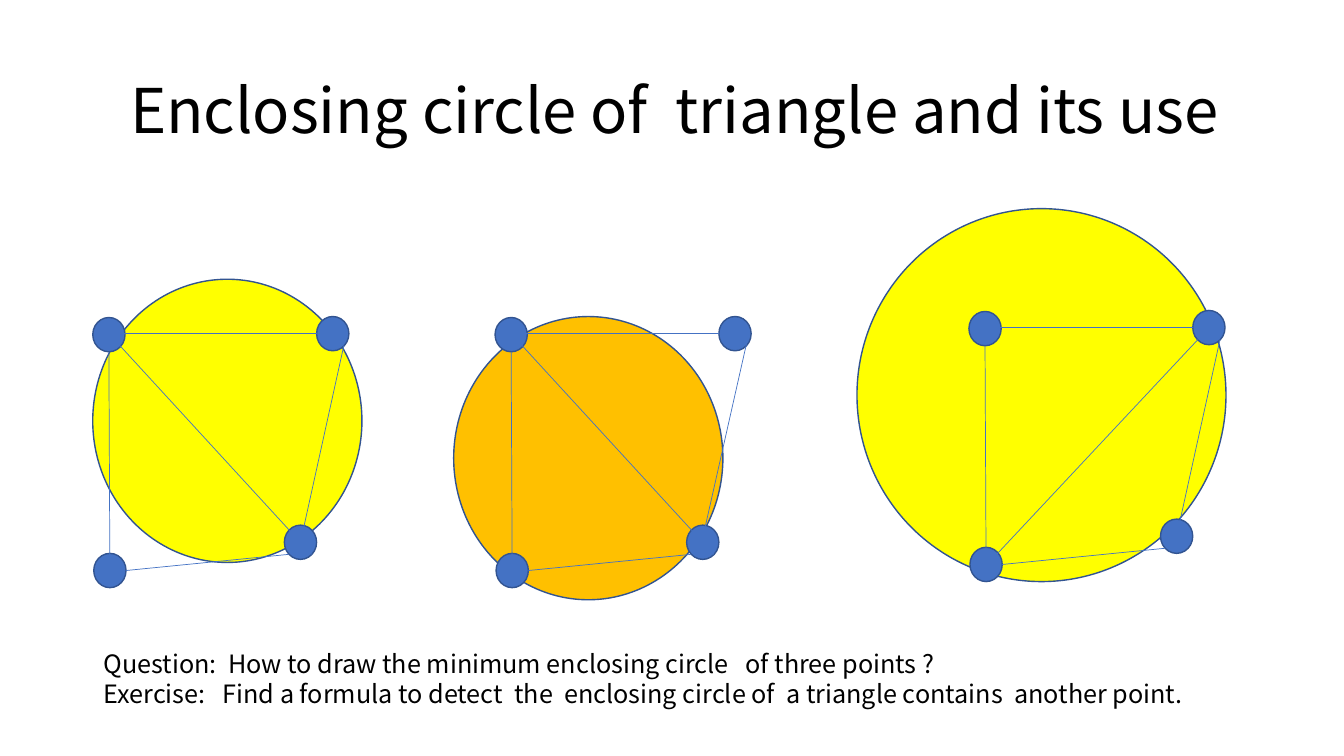
import pptx
import pptx.util
import pptx.dml.color
import pptx.enum.shapes
import pptx.enum.text
import pptx.oxml.ns
import lxml.etree

PX = 9144
FONT = "Noto Sans CJK JP"
COLORS = {
    "text": "000000",
    "point": "4472C4",
    "outline": "325491",
    "passing": "FFFF00",
    "enclosing": "FFC000",
}
POINT_SIZE = (32, 34)
POINTS = [(222, 0), (0, 1), (190, 207), (1, 235)]
SIDES = [
    ((16, 35), (17, 252)),
    ((17, 17), (222, 17)),
    ((33, 252), (194, 236)),
]
RIGHT_SIDE = ((249, 29), (206, 224))
FALLING_DIAGONAL = ((16, 17), (217, 236))
RISING_DIAGONAL = ((227, 29), (21, 249))


def px(*lengths):
    """Turn pixel lengths into EMU."""
    return [length * PX for length in lengths]


def rgb(name):
    """Look up a named colour."""
    return pptx.dml.color.RGBColor.from_string(COLORS[name])


def add_text(slide, box, lines, size, anchor="TOP", inset=10, spacing=1.0, fit="NONE"):
    """Place paragraphs of text in a box."""
    text_box = slide.shapes.add_textbox(*px(*box))
    frame = text_box.text_frame
    frame.word_wrap = True
    frame.auto_size = pptx.enum.text.MSO_AUTO_SIZE[fit]
    frame.vertical_anchor = pptx.enum.text.MSO_ANCHOR[anchor]
    frame.margin_left = inset * PX
    frame.text = "\n".join(lines)
    for paragraph in frame.paragraphs:
        paragraph.line_spacing = spacing
        paragraph.font.size = pptx.util.Pt(size)
        paragraph.font.color.rgb = rgb("text")
        for run in paragraph.runs:
            run.font.name = FONT
            properties = run.font._element
            east_asian = lxml.etree.SubElement(properties, pptx.oxml.ns.qn("a:ea"))
            east_asian.set("typeface", FONT)


def add_ellipse(slide, box, fill):
    """Draw an outlined ellipse in a box."""
    ellipse = slide.shapes.add_shape(pptx.enum.shapes.MSO_SHAPE.OVAL, *px(*box))
    ellipse.shadow.inherit = False
    ellipse.fill.solid()
    ellipse.fill.fore_color.rgb = rgb(fill)
    ellipse.line.color.rgb = rgb("outline")
    ellipse.line.width = pptx.util.Pt(1)


def add_side(slide, start, end):
    """Draw a thin line between two positions."""
    side = slide.shapes.add_connector(
        pptx.enum.shapes.MSO_CONNECTOR.STRAIGHT, *px(*start, *end)
    )
    side.line.color.rgb = rgb("point")
    side.line.width = pptx.util.Pt(0.5)
    lxml.etree.SubElement(side._element.spPr, pptx.oxml.ns.qn("a:effectLst"))


def add_quadrilateral(slide, origin, circle, fill, diagonal, right_side=RIGHT_SIDE):
    """Draw a circle and four joined points, all relative to the origin."""
    left, top = origin

    def shifted(position):
        """Move a relative position to the slide."""
        return left + position[0], top + position[1]

    add_ellipse(slide, (*shifted(circle[:2]), *circle[2:]), fill)
    for point in POINTS:
        add_ellipse(slide, (*shifted(point), *POINT_SIZE), "point")
    for start, end in [*SIDES, right_side, diagonal]:
        add_side(slide, shifted(start), shifted(end))


def main():
    """Build and save the slide."""
    deck = pptx.Presentation()
    deck.slide_width, deck.slide_height = px(1333, 750)
    slide = deck.slides.add_slide(deck.slide_layouts[6])

    add_text(slide, (92, 40, 1150, 145), ["Enclosing circle of  triangle and its use"],
             44, anchor="MIDDLE", inset=37, spacing=0.9)
    add_quadrilateral(slide, (92, 314), (0, -37, 267, 281), "passing", FALLING_DIAGONAL)
    add_quadrilateral(slide, (491, 314), (-41, 0, 267, 281), "enclosing",
                      FALLING_DIAGONAL, right_side=((251, 20), (207, 215)))
    add_quadrilateral(slide, (961, 308), (-111, -101, 366, 370), "passing", RISING_DIAGONAL)
    add_text(slide, (93, 638, 1123, 71), [
        "Question:  How to draw the minimum enclosing circle   of three points ?",
        "Exercise:   Find a formula to detect  the  enclosing circle of  a triangle contains  another point.",
    ], 18, fit="SHAPE_TO_FIT_TEXT")

    deck.save("out.pptx")


if __name__ == "__main__":
    main()
